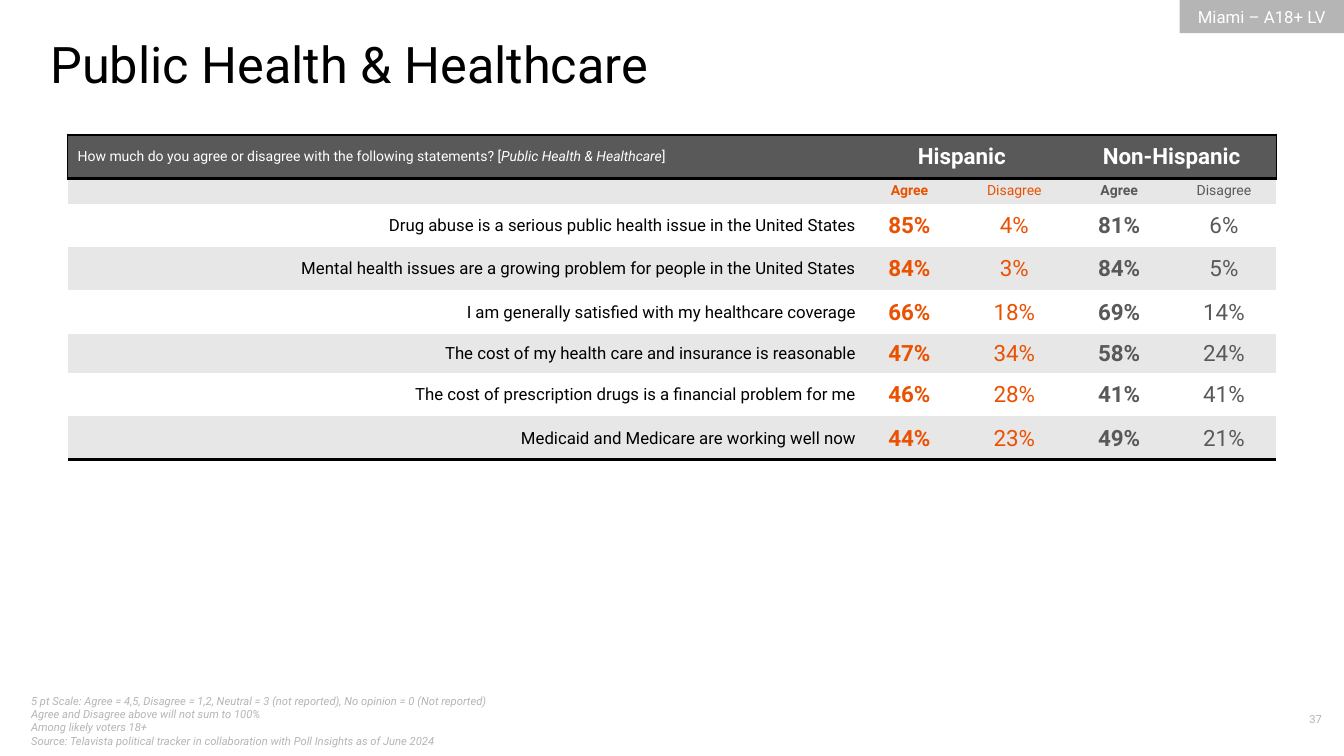
from lxml.etree import SubElement
from pptx import Presentation
from pptx.dml.color import RGBColor
from pptx.enum.shapes import MSO_SHAPE
from pptx.enum.text import MSO_ANCHOR, PP_ALIGN
from pptx.oxml.ns import qn
from pptx.util import Inches, Pt

COLORS = {
    "black": "000000", "white": "FFFFFF", "dark": "595959",
    "band": "E7E7E7", "muted": "B5B5B5", "orange": "EA5101",
}
FONT = "Roboto"
TITLE = "Public Health & Healthcare"
REGION = "Miami – A18+ LV"
PAGE = "37"
FOOTNOTES = [
    "5 pt Scale: Agree = 4,5, Disagree = 1,2, Neutral = 3 (not reported), No opinion = 0 (Not reported)",
    "Agree and Disagree above will not sum to 100%",
    "Among likely voters 18+",
    "Source: Telavista political tracker in collaboration with Poll Insights as of June 2024",
]
QUESTION = [
    ("How much do you agree or disagree with the following statements? [", False),
    (TITLE, True),
    ("]", False),
]
GROUPS = ["Hispanic", "Non-Hispanic"]
ANSWERS = ["", "Agree", "Disagree", "Agree", "Disagree"]
RESULTS = [
    ("Drug abuse is a serious public health issue in the United States", "85%", "4%", "81%", "6%"),
    ("Mental health issues are a growing problem for people in the United States", "84%", "3%", "84%", "5%"),
    ("I am generally satisfied with my healthcare coverage", "66%", "18%", "69%", "14%"),
    ("The cost of my health care and insurance is reasonable", "47%", "34%", "58%", "24%"),
    ("The cost of prescription drugs is a financial problem for me", "46%", "28%", "41%", "41%"),
    ("Medicaid and Medicare are working well now", "44%", "23%", "49%", "21%"),
]
COLUMN_WIDTHS = [7.83, 1.04, 1.04, 1.04, 1.04]
ROW_HEIGHTS = [0.43, 0.25, 0.43, 0.43, 0.43, 0.39, 0.43, 0.43]
TABLE_BOX = (0.67, 1.34, 12, 3.25)
THICK, THIN = 2.25, 1
SIDES = {"left": "a:lnL", "right": "a:lnR", "top": "a:lnT", "bottom": "a:lnB"}


def color(name):
    return RGBColor.from_string(COLORS[name])


def add_run(paragraph, text, size, color_name, **formats):
    run = paragraph.add_run()
    run.text = text
    for name, value in {"name": FONT, "size": Pt(size), **formats}.items():
        setattr(run.font, name, value)
    run.font.color.rgb = color(color_name)


def write_lines(shape, lines, size, color_name, align=PP_ALIGN.LEFT,
                anchor=MSO_ANCHOR.TOP, margin=None, **formats):
    frame = shape.text_frame
    frame.word_wrap = True
    frame.vertical_anchor = anchor
    if margin is not None:
        for side in SIDES:
            setattr(frame, f"margin_{side}", Inches(margin))
    for index, line in enumerate(lines):
        paragraph = frame.add_paragraph() if index else frame.paragraphs[0]
        paragraph.alignment = align
        add_run(paragraph, line, size, color_name, **formats)


def add_text(slide, box, lines, size, color_name, **options):
    shape = slide.shapes.add_textbox(*map(Inches, box))
    write_lines(shape, lines, size, color_name, **options)


def set_borders(cell, widths):
    """Draw the sides given in widths (points) and clear the others."""
    properties = cell._tc.get_or_add_tcPr()
    for index, (side, tag) in enumerate(SIDES.items()):
        line = SubElement(properties, qn(tag), w=str(Pt(widths.get(side, 0))))
        if side in widths:
            fill = SubElement(line, qn("a:solidFill"))
            SubElement(fill, qn("a:srgbClr"), val=COLORS["black"])
        else:
            SubElement(line, qn("a:noFill"))
        properties.insert(index, line)


def style_cell(cell, row, column):
    last_row, last_column = len(ROW_HEIGHTS) - 1, len(COLUMN_WIDTHS) - 1
    cell.vertical_anchor = MSO_ANCHOR.MIDDLE
    cell.fill.solid()
    fill = "dark" if row == 0 else "band" if row % 2 else "white"
    cell.fill.fore_color.rgb = color(fill)
    widths = {}
    if row <= 1:
        widths["top"] = THICK
    if row in (0, last_row):
        widths["bottom"] = THICK
    if row == 0 and column == 0:
        widths["left"] = THIN
    if row == 0 and column >= last_column - 1:
        widths["right"] = THIN
    set_borders(cell, widths)
    if row:
        margins = {"top": 0.02, "bottom": 0.02}
        if row > 1:
            margins = {"left": 0.01, "right": 0.01, "top": 0.01, "bottom": 0}
        for side, margin in margins.items():
            setattr(cell, f"margin_{side}", Inches(margin))


def add_results_table(slide):
    rows = [ANSWERS, *RESULTS]
    frame = slide.shapes.add_table(
        len(ROW_HEIGHTS), len(COLUMN_WIDTHS), *map(Inches, TABLE_BOX))
    table = frame.table
    table.first_row = table.horz_banding = False
    for column, width in zip(table.columns, COLUMN_WIDTHS):
        column.width = Inches(width)
    for row, height in zip(table.rows, ROW_HEIGHTS):
        row.height = Inches(height)
    for row in range(len(ROW_HEIGHTS)):
        for column in range(len(COLUMN_WIDTHS)):
            style_cell(table.cell(row, column), row, column)

    for text, italic in QUESTION:
        add_run(table.cell(0, 0).text_frame.paragraphs[0], text, 10, "white", italic=italic)
    for index, group in enumerate(GROUPS):
        first = 1 + 2 * index
        cell = table.cell(0, first)
        cell.merge(table.cell(0, first + 1))
        paragraph = cell.text_frame.paragraphs[0]
        paragraph.alignment = PP_ALIGN.CENTER
        add_run(paragraph, group, 16, "white", bold=True)

    for row, texts in enumerate(rows, start=1):
        for column, text in enumerate(texts):
            paragraph = table.cell(row, column).text_frame.paragraphs[0]
            if not text:
                SubElement(paragraph._p, qn("a:endParaRPr"), sz="1000")
            elif column == 0:
                paragraph.alignment = PP_ALIGN.RIGHT
                add_run(paragraph, text, 12, "black")
            else:
                paragraph.alignment = PP_ALIGN.CENTER
                add_run(paragraph, text, 10 if row == 1 else 16,
                        "orange" if column <= 2 else "dark", bold=column % 2 == 1)


def main():
    presentation = Presentation()
    presentation.slide_width = Inches(13.33)
    presentation.slide_height = Inches(7.5)
    slide = presentation.slides.add_slide(presentation.slide_layouts[6])

    add_text(slide, (0.21, 6.95, 5.11, 0.4), FOOTNOTES, 8, "muted",
             anchor=MSO_ANCHOR.MIDDLE, italic=True)
    add_text(slide, (12.33, 7.02, 0.88, 0.27), [PAGE], 8, "muted", align=PP_ALIGN.RIGHT)

    tag = slide.shapes.add_shape(MSO_SHAPE.RECTANGLE, *map(Inches, (11.7, 0, 1.63, 0.33)))
    tag.shadow.inherit = False
    tag.fill.solid()
    tag.fill.fore_color.rgb = color("muted")
    tag.line.fill.background()
    write_lines(tag, [REGION], 12, "white", align=PP_ALIGN.CENTER, anchor=MSO_ANCHOR.MIDDLE)

    add_text(slide, (0.5, 0.33, 12, 0.61), [TITLE], 36, "black", margin=0)
    add_results_table(slide)
    presentation.save("out.pptx")


if __name__ == "__main__":
    main()
